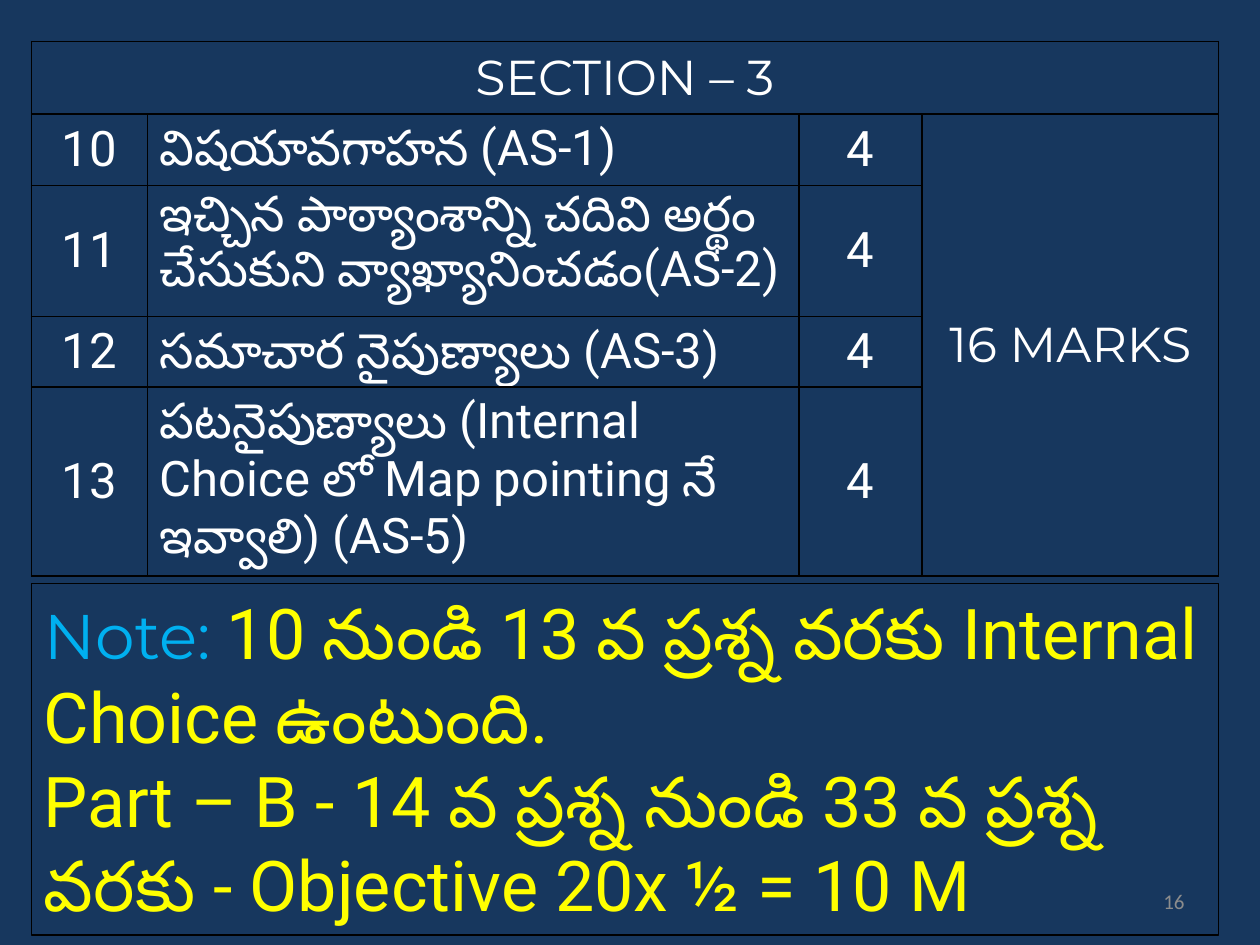
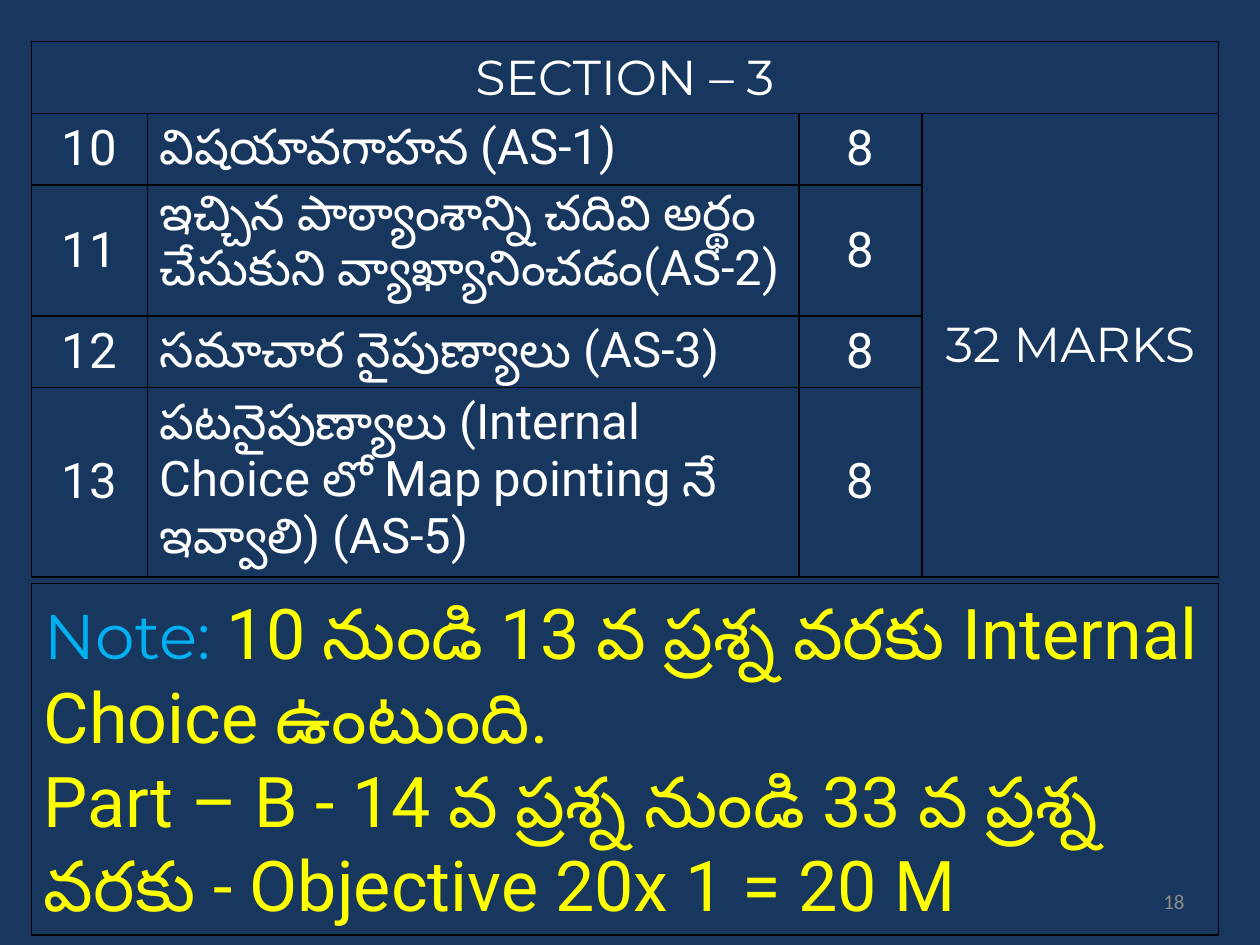
"""Builds two slides on the Section 3 marks scheme."""
from dataclasses import dataclass

from lxml import etree
from pptx import Presentation
from pptx.dml.color import RGBColor
from pptx.enum.shapes import MSO_SHAPE
from pptx.enum.text import MSO_ANCHOR, MSO_AUTO_SIZE, PP_ALIGN
from pptx.oxml.ns import qn
from pptx.util import Inches, Pt

RECTANGLE = MSO_SHAPE.RECTANGLE
TOP, MIDDLE = MSO_ANCHOR.TOP, MSO_ANCHOR.MIDDLE
LEFT, CENTER, RIGHT = PP_ALIGN.LEFT, PP_ALIGN.CENTER, PP_ALIGN.RIGHT
GROW = MSO_AUTO_SIZE.SHAPE_TO_FIT_TEXT


@dataclass(frozen=True)
class Theme:
    background: str = "17375E"
    border: str = "000000"
    table_text: str = "FFFFFF"
    note_label: str = "00B0F0"
    note_text: str = "FFFF00"
    number: str = "8C8C8C"
    heading_font: str = "Montserrat"
    body_font: str = "Roboto"
    number_font: str = "Calibri"
    table_size: int = 28
    label_size: int = 36
    note_size: int = 40
    number_size: int = 12
    cell_border: float = 1
    note_border: float = 0.75


SECTION_TITLE = "SECTION – 3"
QUESTIONS = [
    ("10", "విషయావగాహన (AS-1)"),
    ("11", "ఇచ్చిన పాఠ్యాంశాన్ని చదివి అర్థం చేసుకుని వ్యాఖ్యానించడం(AS-2)"),
    ("12", "సమాచార నైపుణ్యాలు (AS-3)"),
    ("13", "పటనైపుణ్యాలు (Internal Choice లో Map pointing నే ఇవ్వాలి) (AS-5)"),
]
NOTE_LABEL = "Note: "
CHOICE_NOTE = "10 నుండి 13 వ ప్రశ్న వరకు Internal Choice ఉంటుంది."
OBJECTIVE_NOTE = "Part – B - 14 వ ప్రశ్న నుండి 33 వ ప్రశ్న వరకు - Objective "
COLUMN_WIDTHS = [0.92, 5.17, 0.98, 2.35]
ROW_HEIGHTS = [0.57, 0.57, 1.04, 0.56, 1.5]
MARGIN, CONTENT_WIDTH = 0.25, 9.42
PAGES = [
    (4, "20x ½ = 10 M", "16"),
    (8, "20x 1 = 20 M", "18"),
]


def write_span(para, text, *, font, size, color, align=LEFT):
    """Adds formatted text to a paragraph."""
    para.alignment = align
    span = para.add_run()
    span.text = text
    span.font.name = font
    span.font.size = Pt(size)
    span.font.color.rgb = RGBColor.from_string(color)


class MarksDeck:
    """Holds the theme and the current page and draws each kind of element."""

    def __init__(self, theme):
        self.theme = theme
        self.deck = Presentation()
        self.deck.slide_width, self.deck.slide_height = Inches(10), Inches(7.5)
        fill = self.deck.slide_master.background.fill
        fill.solid()
        fill.fore_color.rgb = RGBColor.from_string(theme.background)
        self.page = None

    def add_page(self):
        """Starts a page without placeholders."""
        self.page = self.deck.slides.add_slide(self.deck.slide_layouts[6])

    def outline_cell(self, cell):
        """Clears a cell's fill and draws its four borders."""
        cell.fill.background()
        properties = cell._tc.get_or_add_tcPr()
        for index, side in enumerate(("a:lnL", "a:lnR", "a:lnT", "a:lnB")):
            line = etree.Element(qn(side), w=str(Pt(self.theme.cell_border)))
            fill = etree.SubElement(line, qn("a:solidFill"))
            etree.SubElement(fill, qn("a:srgbClr"), val=self.theme.border)
            properties.insert(index, line)

    def write_cell(self, cell, text, font, align=CENTER, anchor=MIDDLE):
        """Writes a table cell."""
        cell.vertical_anchor = anchor
        write_span(cell.text_frame.paragraphs[0], text, font=font, align=align,
                   size=self.theme.table_size, color=self.theme.table_text)

    def add_marks_table(self, marks):
        """Draws the questions with their marks and the total."""
        theme = self.theme
        table = self.page.shapes.add_table(
            len(ROW_HEIGHTS), len(COLUMN_WIDTHS), Inches(MARGIN), Inches(0.33),
            Inches(CONTENT_WIDTH), Inches(sum(ROW_HEIGHTS))).table
        table.first_row = table.horz_banding = False
        for column, width in zip(table.columns, COLUMN_WIDTHS):
            column.width = Inches(width)
        for row, height in zip(table.rows, ROW_HEIGHTS):
            row.height = Inches(height)
        for cell in table.iter_cells():
            self.outline_cell(cell)
        table.cell(0, 0).merge(table.cell(0, 3))
        table.cell(1, 3).merge(table.cell(4, 3))
        self.write_cell(table.cell(0, 0), SECTION_TITLE, theme.heading_font)
        total = f"{marks * len(QUESTIONS)} MARKS"
        self.write_cell(table.cell(1, 3), total, theme.heading_font)
        for row, (number, topic) in enumerate(QUESTIONS, start=1):
            self.write_cell(table.cell(row, 0), number, theme.body_font)
            self.write_cell(table.cell(row, 1), topic, theme.body_font, LEFT, TOP)
            self.write_cell(table.cell(row, 2), str(marks), theme.body_font)

    def add_note(self, objective):
        """Draws the outlined note under the table."""
        theme = self.theme
        box = self.page.shapes.add_shape(
            RECTANGLE, Inches(MARGIN), Inches(4.63),
            Inches(CONTENT_WIDTH), Inches(2.79))
        box.shadow.inherit = False
        box.fill.background()
        box.line.color.rgb = RGBColor.from_string(theme.border)
        box.line.width = Pt(theme.note_border)
        frame = box.text_frame
        frame.word_wrap = True
        frame.auto_size = GROW
        frame.vertical_anchor = TOP
        body = dict(font=theme.body_font, size=theme.note_size, color=theme.note_text)
        choice = frame.paragraphs[0]
        write_span(choice, NOTE_LABEL, font=theme.heading_font,
                   size=theme.label_size, color=theme.note_label)
        write_span(choice, CHOICE_NOTE, **body)
        write_span(frame.add_paragraph(), OBJECTIVE_NOTE + objective, **body)

    def add_number(self, number):
        """Writes the page number at the lower right."""
        theme = self.theme
        box = self.page.shapes.add_textbox(
            Inches(7.17), Inches(6.95), Inches(2.33), Inches(0.4))
        frame = box.text_frame
        frame.word_wrap = True
        frame.vertical_anchor = MIDDLE
        write_span(frame.paragraphs[0], number, font=theme.number_font,
                   size=theme.number_size, color=theme.number, align=RIGHT)


def main():
    """Builds and saves the deck."""
    builder = MarksDeck(Theme())
    for marks, objective, number in PAGES:
        builder.add_page()
        builder.add_marks_table(marks)
        builder.add_note(objective)
        builder.add_number(number)
    builder.deck.save("out.pptx")


if __name__ == "__main__":
    main()
